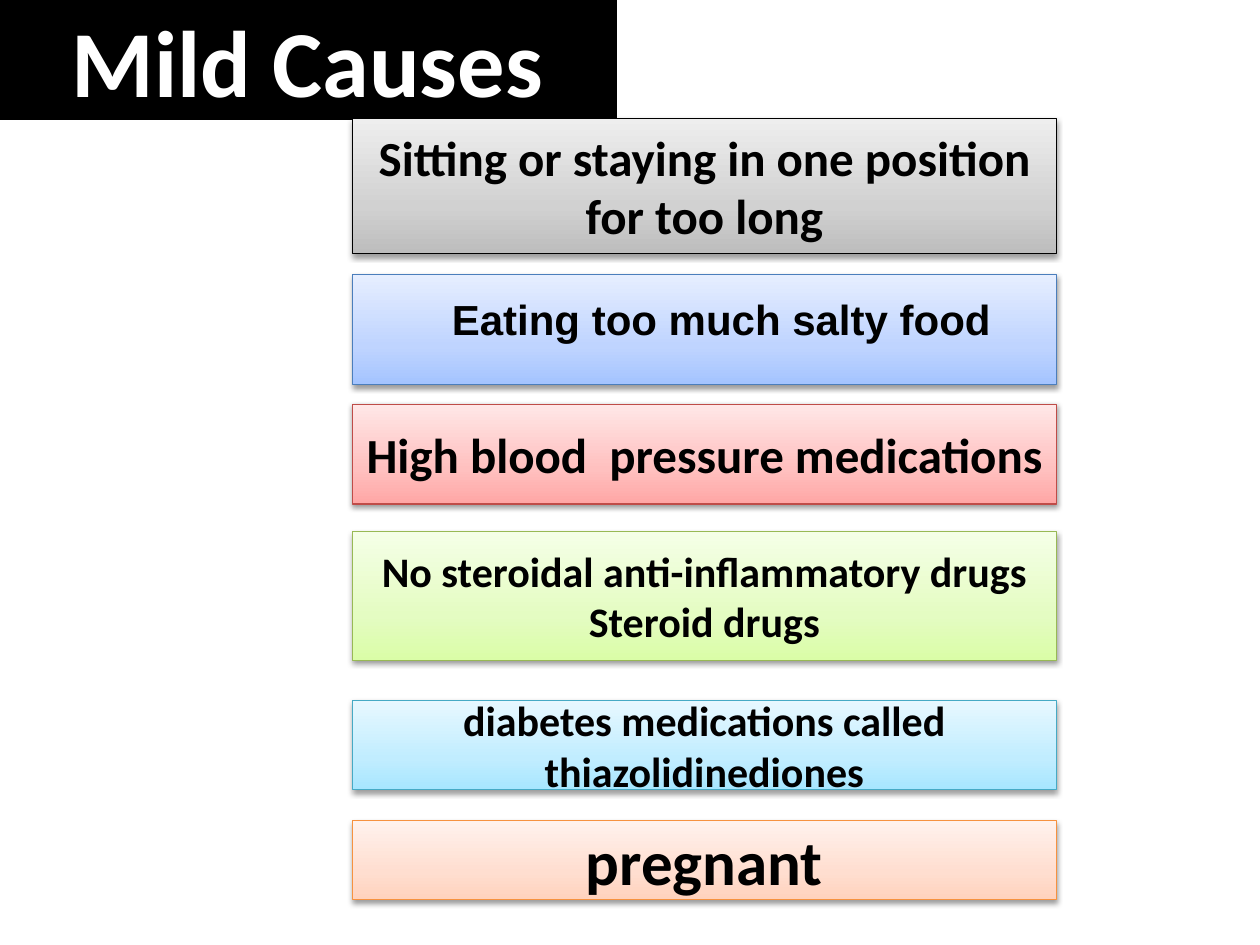
"""Build the slide on mild causes: a black title bar and six gradient boxes."""
from copy import deepcopy
from dataclasses import dataclass

from lxml.etree import SubElement
from pptx import Presentation
from pptx.dml.color import RGBColor
from pptx.enum.shapes import MSO_SHAPE as Shape
from pptx.enum.text import MSO_ANCHOR as Anchor, MSO_AUTO_SIZE as AutoSize, PP_ALIGN as Align
from pptx.oxml.ns import qn
from pptx.util import Cm, Pt

BOX_LEFT, BOX_WIDTH = 7.1, 14.2
STOPS = (0, 0.35, 1)


@dataclass
class Cause:
    text: str
    top: float
    height: float
    size: int
    line: str
    gradient: tuple[str, str, str]
    font: str = "Calibri"
    indent: float = 0


CAUSES = [
    Cause("Sitting or staying in one position for too long", 2.39, 2.72, 28,
          "000000", ("BDBDBD", "D1D1D1", "EEEEEE")),
    Cause("Eating too much salty food", 5.54, 2.21, 24,
          "4B7EBC", ("A4C4FF", "BFD4FF", "E6EEFF"), "Arial", 1.76),
    Cause("High blood  pressure medications", 8.15, 2.01, 28,
          "BF4C48", ("FFA6A5", "FFC0BF", "FFE7E7")),
    Cause("No steroidal anti-inflammatory drugs\nSteroid drugs", 10.72, 2.59, 24,
          "98B955", ("DAFDA7", "E4FCC2", "F5FFE7")),
    Cause("diabetes medications called thiazolidinediones", 14.12, 1.8, 24,
          "46AAC5", ("A7E6FF", "C1EDFF", "E7F8FF")),
    Cause("pregnant", 16.54, 1.6, 36,
          "F69240", ("FFD2BD", "FFDED0", "FFF2ED")),
]


def rgb(value: str) -> RGBColor:
    """Turn a hex string into a colour."""
    return RGBColor.from_string(value)


def place(sp, left: float, top: float, width: float, height: float) -> None:
    """Set position and size in centimetres."""
    sp.left, sp.top, sp.width, sp.height = Cm(left), Cm(top), Cm(width), Cm(height)


def set_line(sp, color: str, width: float) -> None:
    """Give the shape a solid outline."""
    sp.line.color.rgb = rgb(color)
    sp.line.width = Pt(width)


def set_text(sp, text: str, size: int, color: str, font: str = "Calibri") -> None:
    """Write bold centred text in the middle of the shape."""
    tf = sp.text_frame
    tf.text = text
    tf.word_wrap = True
    tf.auto_size = AutoSize.NONE
    tf.vertical_anchor = Anchor.MIDDLE
    for p in tf.paragraphs:
        p.alignment = Align.CENTER
        p.font.name, p.font.size, p.font.bold = font, Pt(size), True
        p.font.color.rgb = rgb(color)


def set_gradient(sp, colors: tuple[str, str, str]) -> None:
    """Fill the shape with three stops rising from the bottom."""
    sp.fill.gradient()
    sp.fill.gradient_angle = 90
    first = sp._element.spPr.find(".//" + qn("a:gs"))
    first.addnext(deepcopy(first))
    for stop, position, color in zip(sp.fill.gradient_stops, STOPS, colors):
        stop.position = position
        stop.color.rgb = rgb(color)


def set_shadow(sp) -> None:
    """Drop a soft black shadow below the shape."""
    sp.shadow.inherit = False
    effects = sp._element.spPr.find(qn("a:effectLst"))
    shadow = SubElement(effects, qn("a:outerShdw"), blurRad=str(Pt(3.1)),
                        dist=str(Pt(1.6)), dir="5400000", rotWithShape="0")
    color = SubElement(shadow, qn("a:srgbClr"), val="000000")
    SubElement(color, qn("a:alpha"), val="38000")


def add_title(s, text: str) -> None:
    """Format the title placeholder as a black bar."""
    sp = s.shapes.title
    place(sp, 0, 0, 12.4, 2.39)
    sp.fill.solid()
    sp.fill.fore_color.rgb = rgb("000000")
    set_line(sp, "000000", 2)
    set_text(sp, text, 54, "FFFFFF")


def add_cause(s, cause: Cause) -> None:
    """Draw one gradient box with its cause."""
    sp = s.shapes.add_shape(Shape.RECTANGLE, Cm(BOX_LEFT), Cm(cause.top),
                            Cm(BOX_WIDTH), Cm(cause.height))
    set_gradient(sp, cause.gradient)
    set_line(sp, cause.line, 0.75)
    set_shadow(sp)
    set_text(sp, cause.text, cause.size, "000000", cause.font)
    if cause.indent:
        p = sp.text_frame.paragraphs[0]
        p.alignment = Align.LEFT
        p.line_spacing, p.space_after = Pt(16.8), Pt(9)
        p._p.get_or_add_pPr().set("marL", str(Cm(cause.indent)))


def main() -> None:
    """Build and save the slide."""
    prs = Presentation()
    prs.slide_width, prs.slide_height = Cm(25.4), Cm(19.05)
    s = prs.slides.add_slide(prs.slide_layouts[5])
    add_title(s, "Mild Causes")
    for cause in CAUSES:
        add_cause(s, cause)
    prs.save("out.pptx")


if __name__ == "__main__":
    main()
